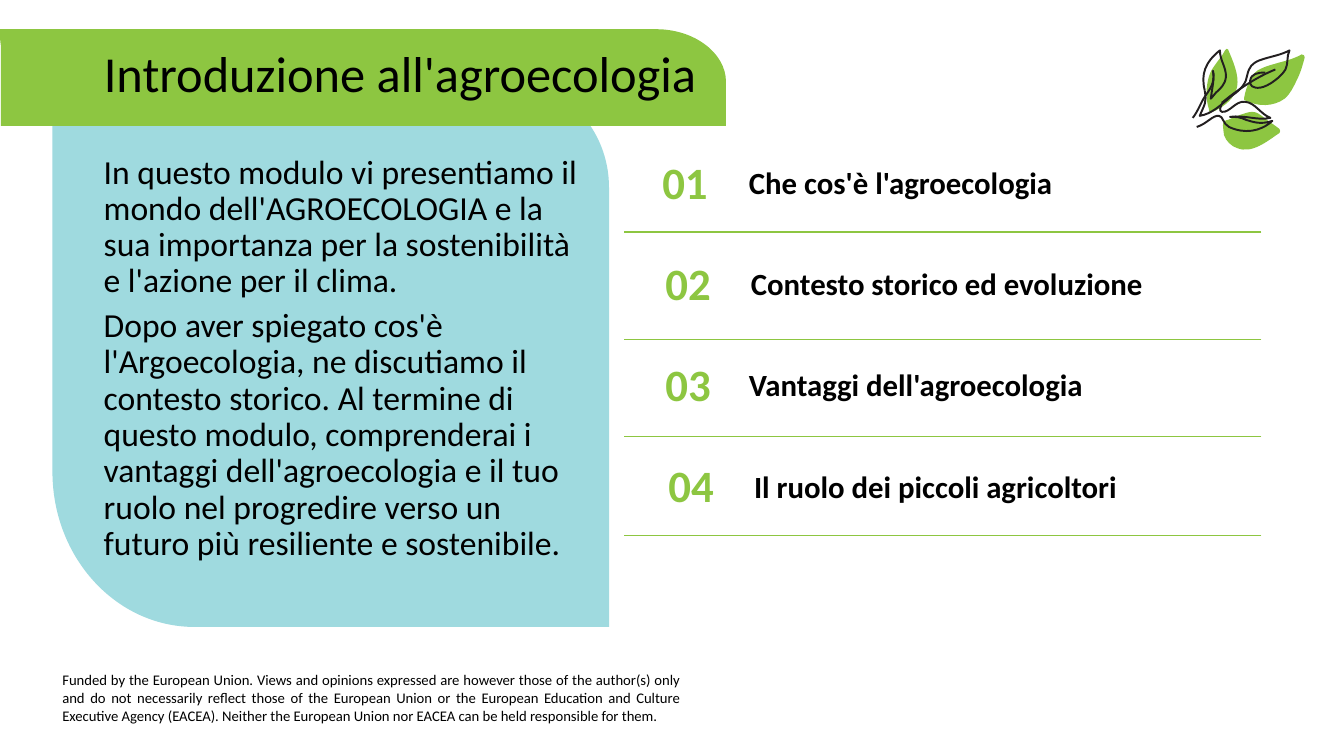
from pptx import Presentation
from pptx.dml.color import RGBColor
from pptx.enum import shapes, text
from pptx.oxml import ns
from pptx.util import Inches, Pt
from lxml import etree

COLORS = {"green": "8DC641", "blue": "9FDADF", "ink": "231F20", "black": "000000"}
FONT = "Calibri"
LEFT, CENTER, JUSTIFY = text.PP_ALIGN.LEFT, text.PP_ALIGN.CENTER, text.PP_ALIGN.JUSTIFY
TOP, MIDDLE = text.MSO_ANCHOR.TOP, text.MSO_ANCHOR.MIDDLE

# Contours in inches: a start point, then (x, y) line ends or six-number Bezier curves
PANEL = [(6.04, 6.22), (1.93, 6.22), (1.15, 6.22, 0.52, 5.53, 0.52, 4.68),
         (0.52, 0.82), (5.08, 0.82), (5.61, 0.82, 6.04, 1.29, 6.04, 1.86)]
BANNER = [(-0.02, 0.29), (6.51, 0.29), (6.89, 0.29, 7.2, 0.53, 7.2, 0.81),
          (7.2, 1.25), (0.01, 1.25), (0.01, 0.48), (0.01, 0.44, 0, 0.41, 0, 0.37)]
LEAVES = [
    [(12.05, 1.1), (12.15, 1.05, 12.25, 0.97, 12.27, 0.86),
     (12.29, 0.74, 12.23, 0.61, 12.18, 0.49), (12.18, 0.48, 12.15, 0.48, 12.15, 0.5),
     (12.12, 0.56, 12.08, 0.6, 12.04, 0.66), (12.01, 0.7, 11.99, 0.75, 11.98, 0.8),
     (11.96, 0.89, 11.96, 0.99, 11.99, 1.08), (11.98, 1.09, 12, 1.12, 12.02, 1.11)],
    [(12.74, 0.98), (12.8, 0.93, 12.83, 0.86, 12.86, 0.8),
     (12.9, 0.72, 12.92, 0.65, 12.94, 0.57), (12.94, 0.55, 12.93, 0.54, 12.91, 0.54),
     (12.84, 0.58, 12.77, 0.6, 12.69, 0.62), (12.63, 0.64, 12.57, 0.65, 12.51, 0.68),
     (12.46, 0.7, 12.42, 0.74, 12.4, 0.79), (12.37, 0.85, 12.35, 0.91, 12.34, 0.97),
     (12.33, 0.99, 12.34, 1, 12.36, 1), (12.48, 1.06, 12.63, 1.06, 12.74, 0.98)],
    [(12.69, 1.32), (12.7, 1.31, 12.7, 1.29, 12.69, 1.28),
     (12.64, 1.24, 12.59, 1.21, 12.54, 1.17), (12.5, 1.14, 12.47, 1.11, 12.42, 1.11),
     (12.38, 1.11, 12.34, 1.13, 12.3, 1.14), (12.26, 1.16, 12.22, 1.17, 12.18, 1.19),
     (12.16, 1.19, 12.12, 1.21, 12.13, 1.25), (12.13, 1.28, 12.14, 1.32, 12.14, 1.34),
     (12.16, 1.4, 12.21, 1.45, 12.27, 1.47), (12.42, 1.53, 12.57, 1.4, 12.69, 1.32)],
]
STROKES = [
    # Left leaf with its stem and vein
    [(11.83, 1.17), (11.88, 1.11, 11.92, 1, 11.95, 0.96),
     (11.99, 0.9, 12.06, 0.82, 12.03, 0.7)],
    [(11.95, 0.9), (11.91, 0.74, 11.95, 0.62, 12.1, 0.5),
     (12.1, 0.6, 12.16, 0.66, 12.16, 0.76), (12.15, 0.85, 12.1, 0.88, 12.06, 0.92),
     (12.01, 0.98), (12.02, 0.88, 12.05, 0.78, 12.03, 0.7)],
    # Right leaf and vein
    [(11.95, 0.9), (11.97, 1.02, 11.95, 1.03, 11.9, 1.15),
     (12.02, 1.13, 12.1, 1.05, 12.22, 0.95), (12.32, 0.88, 12.36, 0.82, 12.37, 0.75),
     (12.39, 0.66, 12.42, 0.63, 12.49, 0.6), (12.6, 0.56, 12.7, 0.55, 12.79, 0.5),
     (12.76, 0.56, 12.78, 0.63, 12.75, 0.69), (12.71, 0.76, 12.58, 0.86, 12.5, 0.87),
     (12.43, 0.88, 12.39, 0.85, 12.4, 0.8), (12.41, 0.73, 12.48, 0.72, 12.55, 0.72)],
    [(12.12, 1.02), (12.25, 0.91, 12.45, 0.77, 12.65, 0.69)],
    # Lower leaf
    [(11.87, 1.26), (11.97, 1.23, 12.03, 1.14, 12.09, 1.15),
     (12.13, 1.15, 12.13, 1.23, 12.19, 1.26), (12.34, 1.33, 12.5, 1.31, 12.62, 1.2),
     (12.5, 1.24, 12.43, 1.21, 12.36, 1.19), (12.3, 1.16, 12.26, 1.16, 12.2, 1.16),
     (12.35, 1.14, 12.48, 1.2, 12.6, 1.17), (12.5, 1.13, 12.45, 1.02, 12.35, 1.01),
     (12.25, 1, 12.2, 1.12, 12.12, 1.11), (12.09, 1.1, 12.1, 1.07, 12.13, 1.01)],
]

# Number, number left, topic, topic left, topic width, row top, rule height
TOPICS = [
    ("01", 6.41, "Che cos'è l'agroecologia", 7.33, 4.88, 1.46, 2.3),
    ("02", 6.44, "Contesto storico ed evoluzione", 7.35, 5.37, 2.46, 3.37),
    ("03", 6.44, "Vantaggi dell'agroecologia", 7.33, 4.88, 3.46, 4.33),
    ("04", 6.47, "Il ruolo dei piccoli agricoltori", 7.38, 4.88, 4.47, 5.31),
]
INTRO = [
    "In questo modulo vi presentiamo il mondo dell'AGROECOLOGIA e la sua importanza "
    "per la sostenibilità e l'azione per il clima.",
    "Dopo aver spiegato cos'è l'Argoecologia, ne discutiamo il contesto storico. "
    "Al termine di questo modulo, comprenderai i vantaggi dell'agroecologia e il tuo "
    "ruolo nel progredire verso un futuro più resiliente e sostenibile.",
]
FUNDING = (
    "Funded by the European Union. Views and opinions expressed are however those of the "
    "author(s) only and do not necessarily reflect those of the European Union or the "
    "European Education and Culture Executive Agency (EACEA). Neither the European Union "
    "nor EACEA can be held responsible for them."
)


def rgb(name):
    return RGBColor.from_string(COLORS[name])


def bend(shape, contours):
    """Replace the straight segments that stand for curves with Bezier segments."""
    parts = [part for contour in contours for part in contour[1:]]
    segments = list(shape._element.iter(ns.qn("a:lnTo")))
    for segment, part in zip(segments, parts):
        if len(part) == 2:
            continue
        curve = etree.Element(ns.qn("a:cubicBezTo"))
        for x, y in zip(part[::2], part[1::2]):
            etree.SubElement(curve, ns.qn("a:pt"), x=str(Inches(x) - shape.left),
                             y=str(Inches(y) - shape.top))
        segment.getparent().replace(segment, curve)


def add_outline(page, contours, fill=None, line=None, width=1.4):
    builder = None
    for contour in contours:
        ends = [tuple(map(Inches, part[-2:])) for part in contour]
        if builder is None:
            builder = page.shapes.build_freeform(*ends[0])
        else:
            builder.move_to(*ends[0])
        builder.add_line_segments(ends[1:], close=fill is not None)
    shape = builder.convert_to_shape()
    bend(shape, contours)
    shape.shadow.inherit = False
    if fill:
        shape.fill.solid()
        shape.fill.fore_color.rgb = rgb(fill)
    else:
        shape.fill.background()
    if line:
        shape.line.color.rgb = rgb(line)
        shape.line.width = Pt(width)
    else:
        shape.line.fill.background()


def add_rule(page, y):
    rule = page.shapes.add_connector(shapes.MSO_CONNECTOR.STRAIGHT,
                                     Inches(12.51), Inches(y), Inches(6.19), Inches(y))
    rule.line.color.rgb = rgb("green")
    rule.line.width = Pt(1)
    etree.SubElement(rule._element.spPr, ns.qn("a:effectLst"))


def write(box, paragraphs, size, color="black", bold=False, align=LEFT,
          anchor=TOP, spacing=0.9):
    frame = box.text_frame
    frame.word_wrap = True
    frame.auto_size = text.MSO_AUTO_SIZE.NONE
    frame.vertical_anchor = anchor
    for index, words in enumerate(paragraphs):
        para = frame.add_paragraph() if index else frame.paragraphs[0]
        para.alignment = align
        para.line_spacing = spacing
        para.space_before = Pt(6 if index else 0)
        span = para.add_run()
        span.text = words
        span.font.name = FONT
        span.font.size = Pt(size)
        span.font.bold = bold
        span.font.color.rgb = rgb(color)


def add_text(page, place, paragraphs, **style):
    box = page.shapes.add_textbox(*map(Inches, place))
    write(box, paragraphs, **style)


def set_title(page, place, words):
    title = page.shapes.title
    title.left, title.top, title.width, title.height = map(Inches, place)
    write(title, [words], size=36, anchor=MIDDLE)
    page.shapes._spTree.append(title._element)  # in front of the banner


def main():
    deck = Presentation()
    deck.slide_width, deck.slide_height = Inches(13.33), Inches(7.5)
    page = deck.slides.add_slide(deck.slide_layouts[5])

    # Panel, banner and title
    add_outline(page, [PANEL], fill="blue")
    add_outline(page, [BANNER], fill="green")
    set_title(page, (0.93, 0.36, 6.45, 0.79), "Introduzione all'agroecologia")

    # Introduction and funding note
    add_text(page, (0.93, 1.49, 5.02, 4.36), INTRO, size=24)
    add_text(page, (0.52, 6.61, 6.33, 0.66), [FUNDING], size=10.5, align=JUSTIFY, spacing=1.0)

    # Numbered topics
    for number, number_left, topic, topic_left, topic_width, top, rule_y in TOPICS:
        add_rule(page, rule_y)
        add_text(page, (number_left, top, 0.77, 0.75), [number], size=32,
                 color="green", bold=True, align=CENTER, anchor=MIDDLE)
        add_text(page, (topic_left, top, topic_width, 0.75), [topic], size=22,
                 bold=True, anchor=MIDDLE)

    # Leaf ornament
    for leaf in LEAVES:
        add_outline(page, [leaf], fill="green")
    add_outline(page, STROKES, line="ink")

    deck.save("out.pptx")


if __name__ == "__main__":
    main()
